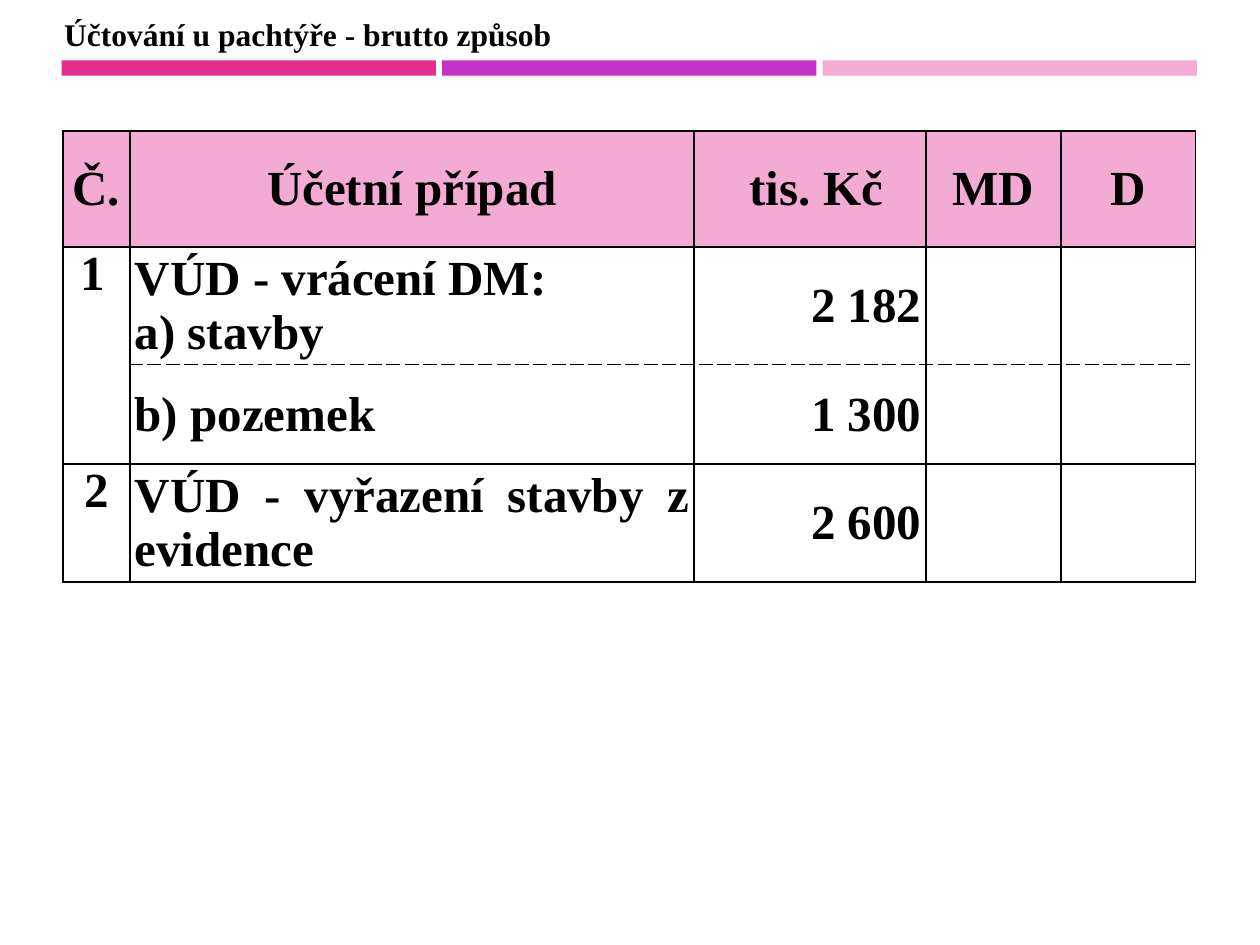
from lxml.etree import SubElement
from pptx import Presentation
from pptx.dml.color import RGBColor
from pptx.enum.shapes import MSO_SHAPE
from pptx.enum.text import MSO_ANCHOR, MSO_AUTO_SIZE, PP_ALIGN
from pptx.oxml.ns import qn
from pptx.util import Inches, Pt

BLACK = RGBColor(0x00, 0x00, 0x00)
MAGENTA = RGBColor(0xE3, 0x2D, 0x91)
PURPLE = RGBColor(0xC8, 0x30, 0xCC)
PINK = RGBColor(0xF3, 0xAC, 0xD3)
HEADER_PINK = RGBColor(0xF4, 0xAB, 0xD3)
FONT = "Times New Roman"

COLUMN_WIDTHS = [0.53, 4.48, 1.84, 1.07, 1.07]
ROW_HEIGHTS = [0.92, 0.93, 0.79, 0.93]
ENTRIES = [
    ["Č.", "Účetní případ", " tis. Kč", "MD", "D"],
    [" 1", "VÚD - vrácení DM:\na) stavby", "2 182", "", ""],
    ["", "b) pozemek", "1 300", "", ""],
    ["2", "VÚD - vyřazení stavby z evidence", "2 600", "", ""],
]
COLUMN_ALIGNMENTS = [PP_ALIGN.CENTER, PP_ALIGN.JUSTIFY, PP_ALIGN.RIGHT,
                     PP_ALIGN.CENTER, PP_ALIGN.CENTER]


def add_text(paragraph, text, size, alignment):
    """Add one bold black run to an aligned paragraph."""
    paragraph.alignment = alignment
    run = paragraph.add_run()
    run.text = text
    run.font.name = FONT
    run.font.size = Pt(size)
    run.font.bold = True
    run.font.color.rgb = BLACK


def set_title(slide, text):
    """Place and fill the title."""
    title = slide.shapes.title
    title.left, title.top = Inches(0.41), Inches(0.07)
    title.width, title.height = Inches(4.11), Inches(0.4)
    frame = title.text_frame
    frame.word_wrap = False
    frame.auto_size = MSO_AUTO_SIZE.SHAPE_TO_FIT_TEXT
    frame.vertical_anchor = MSO_ANCHOR.TOP
    add_text(frame.paragraphs[0], text, 18, PP_ALIGN.LEFT)


def add_color_bars(slide):
    """Draw the three evenly spaced bars below the title."""
    for index, color in enumerate([MAGENTA, PURPLE, PINK]):
        bar = slide.shapes.add_shape(
            MSO_SHAPE.RECTANGLE, Inches(0.49 + 3.02 * index), Inches(0.48),
            Inches(2.97), Inches(0.12))
        bar.shadow.inherit = False
        bar.fill.solid()
        bar.fill.fore_color.rgb = color
        bar.line.fill.background()


def set_borders(cell, dashed_side):
    """Outline a cell in black, with at most one dashed side."""
    properties = cell._tc.get_or_add_tcPr()
    for side in ["lnL", "lnR", "lnT", "lnB"]:
        border = SubElement(properties, qn(f"a:{side}"), w=str(Pt(1)))
        fill = SubElement(border, qn("a:solidFill"))
        SubElement(fill, qn("a:srgbClr"), val=str(BLACK))
        dash = "dash" if side == dashed_side else "solid"
        SubElement(border, qn("a:prstDash"), val=dash)


def format_cell(cell, row, column):
    """Fill one cell with its entry and style it by position."""
    header = row == 0
    dashed_sides = {1: "lnB", 2: "lnT"}
    set_borders(cell, dashed_sides.get(row) if column else None)
    if header:
        cell.fill.solid()
        cell.fill.fore_color.rgb = HEADER_PINK
    else:
        cell.fill.background()
    cell.margin_left = cell.margin_right = Inches(0.04)
    cell.margin_top = cell.margin_bottom = 0
    numbered = column == 0 and not header
    cell.vertical_anchor = MSO_ANCHOR.TOP if numbered else MSO_ANCHOR.MIDDLE
    alignment = PP_ALIGN.CENTER if header else COLUMN_ALIGNMENTS[column]
    if (row, column) == (1, 0):
        alignment = PP_ALIGN.LEFT
    entry = ENTRIES[row][column]
    for index, line in enumerate(entry.split("\n") if entry else []):
        frame = cell.text_frame
        paragraph = frame.add_paragraph() if index else frame.paragraphs[0]
        add_text(paragraph, line, 28, alignment)


def add_entries_table(slide):
    """Add the table of accounting entries."""
    table = slide.shapes.add_table(
        len(ROW_HEIGHTS), len(COLUMN_WIDTHS), Inches(0.5), Inches(1.04),
        Inches(sum(COLUMN_WIDTHS)), Inches(sum(ROW_HEIGHTS))).table
    table.first_row = False
    table.horz_banding = False
    for column, width in zip(table.columns, COLUMN_WIDTHS):
        column.width = Inches(width)
    for row, height in zip(table.rows, ROW_HEIGHTS):
        row.height = Inches(height)
    table.cell(1, 0).merge(table.cell(2, 0))
    for row in range(len(ROW_HEIGHTS)):
        for column in range(len(COLUMN_WIDTHS)):
            format_cell(table.cell(row, column), row, column)


def main():
    """Build and save the slide."""
    presentation = Presentation()
    presentation.slide_width = Inches(10)
    presentation.slide_height = Inches(7.5)
    slide = presentation.slides.add_slide(presentation.slide_layouts[5])
    add_color_bars(slide)
    set_title(slide, "Účtování u pachtýře - brutto způsob")
    add_entries_table(slide)
    presentation.save("out.pptx")


if __name__ == "__main__":
    main()
